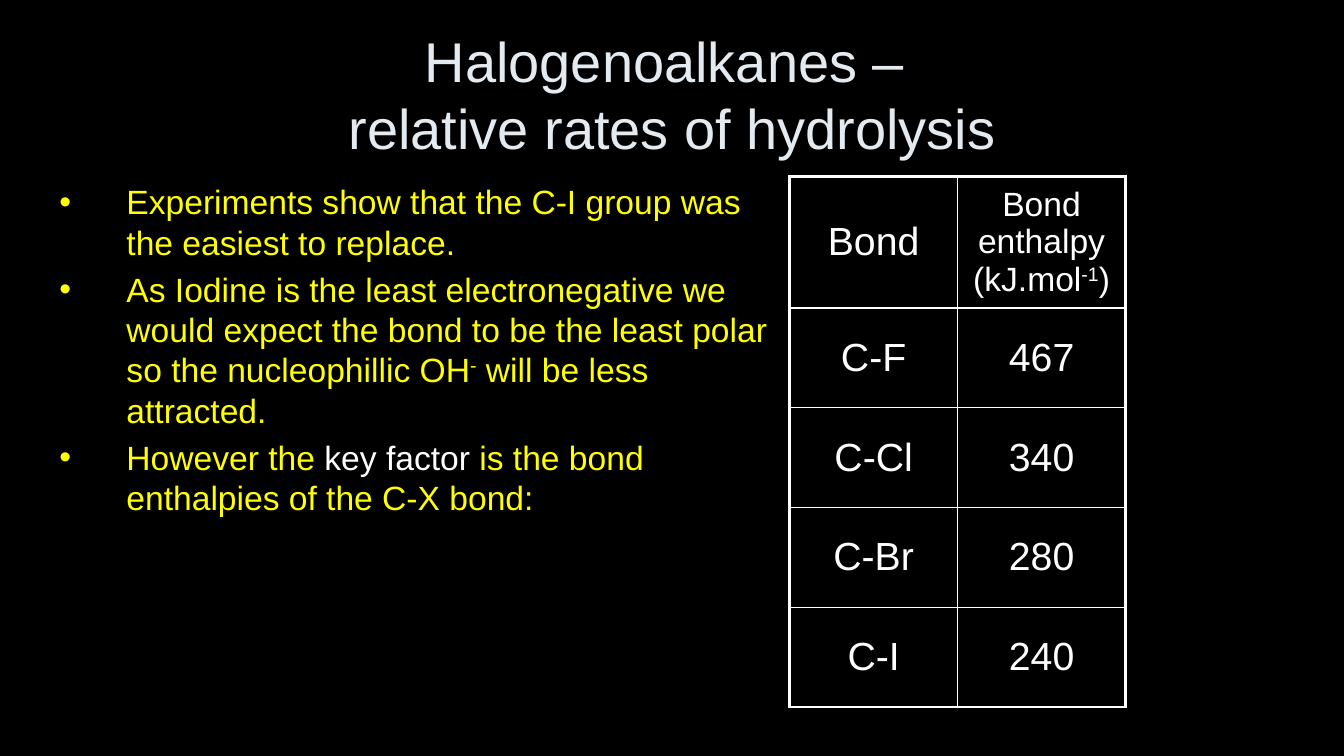
from lxml.etree import SubElement
from pptx import Presentation
from pptx.dml.color import RGBColor
from pptx.enum.text import MSO_ANCHOR, MSO_AUTO_SIZE, PP_ALIGN
from pptx.oxml import parse_xml
from pptx.oxml.ns import nsdecls, qn
from pptx.util import Pt

WHITE, YELLOW, PALE, BLACK = "FFFFFF", "FFFF00", "E3EBF1", "000000"
FONT = "Arial"
LINE_RATIO = 1.2
TITLE_SIZE, BODY_SIZE, CELL_SIZE = 40, 24, 28
TITLE_BOX = (48, 21.6, 864, 90)
BODY_BOX = (35.28, 126, 522.72, 396)
INDENT = 48

TITLE = ["Halogenoalkanes – ", "relative rates of hydrolysis"]
BULLETS = [
    [("Experiments show that the C-I group was the easiest to replace.", YELLOW, False)],
    [
        ("As Iodine is the least electronegative we would expect the bond to be "
         "the least polar so the nucleophillic OH", YELLOW, False),
        ("-", YELLOW, True),
        (" will be less attracted.", YELLOW, False),
    ],
    [
        ("However the ", YELLOW, False),
        ("key factor", WHITE, False),
        (" is the bond enthalpies of the C-X bond:", YELLOW, False),
    ],
]
ENTHALPY_HEADING = [
    ("Bond enthalpy (kJ.mol", WHITE, False),
    ("-1", WHITE, True),
    (")", WHITE, False),
]
ENTHALPIES = [("C-F", "467"), ("C-Cl", "340"), ("C-Br", "280"), ("C-I", "240")]
TABLE_LEFT, TABLE_TOP, COLUMN_WIDTH = 564, 126, 120
HEADER_HEIGHT, ROW_HEIGHT = 94, 71.25
OUTER_LINE, INNER_LINE = 2.25, 1


def color(value):
    return RGBColor.from_string(value)


def add_span(para, text, size, shade, raised=False):
    span = para.add_run()
    span.text = text
    span.font.name = FONT
    span.font.size = Pt(size)
    span.font.bold = False
    span.font.color.rgb = color(shade)
    if raised:
        span.font._element.set("baseline", "30000")


def add_title(page):
    box = page.shapes.title
    box.left, box.top, box.width, box.height = map(Pt, TITLE_BOX)
    frame = box.text_frame
    frame.word_wrap = True
    frame.auto_size = MSO_AUTO_SIZE.NONE
    frame.vertical_anchor = MSO_ANCHOR.MIDDLE
    para = frame.paragraphs[0]
    para.alignment = PP_ALIGN.CENTER
    para.line_spacing = Pt(TITLE_SIZE * LINE_RATIO)
    for number, line in enumerate(TITLE):
        if number:
            para.add_line_break()
        add_span(para, line, TITLE_SIZE, PALE)


def add_bullets(page):
    frame = page.shapes.add_textbox(*map(Pt, BODY_BOX)).text_frame
    frame.word_wrap = True
    for number, spans in enumerate(BULLETS):
        para = frame.add_paragraph() if number else frame.paragraphs[0]
        para.line_spacing = Pt(BODY_SIZE * LINE_RATIO)
        para.space_before = Pt(BODY_SIZE * 0.2)
        properties = para._p.get_or_add_pPr()
        properties.set("marL", str(Pt(INDENT)))
        properties.set("indent", str(-Pt(INDENT)))
        SubElement(properties, qn("a:buFont")).set("typeface", FONT)
        SubElement(properties, qn("a:buChar")).set("char", "•")
        for text, shade, raised in spans:
            add_span(para, text, BODY_SIZE, shade, raised)


def set_borders(cell, edges):
    properties = cell._tc.get_or_add_tcPr()
    for place, (side, outer) in enumerate(edges.items()):
        width = Pt(OUTER_LINE if outer else INNER_LINE)
        properties.insert(place, parse_xml(
            f'<a:ln{side} {nsdecls("a")} w="{width}"><a:solidFill>'
            f'<a:srgbClr val="{WHITE}"/></a:solidFill></a:ln{side}>'))


def add_bond_table(page):
    rows = [([("Bond", WHITE, False)], ENTHALPY_HEADING)]
    rows += [tuple([(text, WHITE, False)] for text in pair) for pair in ENTHALPIES]
    heights = [HEADER_HEIGHT] + [ROW_HEIGHT] * len(ENTHALPIES)
    last_row, last_column = len(rows) - 1, len(rows[0]) - 1
    table = page.shapes.add_table(
        len(rows), len(rows[0]), Pt(TABLE_LEFT), Pt(TABLE_TOP),
        Pt(COLUMN_WIDTH * len(rows[0])), Pt(sum(heights))).table
    table.first_row = table.horz_banding = False
    for column in table.columns:
        column.width = Pt(COLUMN_WIDTH)
    for i, row in enumerate(rows):
        table.rows[i].height = Pt(heights[i])
        for j, spans in enumerate(row):
            cell = table.cell(i, j)
            cell.fill.background()
            cell.vertical_anchor = MSO_ANCHOR.MIDDLE
            set_borders(cell, {"L": j == 0, "R": j == last_column,
                               "T": i == 0, "B": i == last_row})
            para = cell.text_frame.paragraphs[0]
            para.alignment = PP_ALIGN.CENTER
            size = BODY_SIZE if spans is ENTHALPY_HEADING else CELL_SIZE
            for text, shade, raised in spans:
                add_span(para, text, size, shade, raised)


def main():
    deck = Presentation()
    deck.slide_width, deck.slide_height = Pt(960), Pt(540)
    page = deck.slides.add_slide(deck.slide_layouts[5])
    page.background.fill.solid()
    page.background.fill.fore_color.rgb = color(BLACK)
    add_title(page)
    add_bullets(page)
    add_bond_table(page)
    deck.save("out.pptx")


if __name__ == "__main__":
    main()
